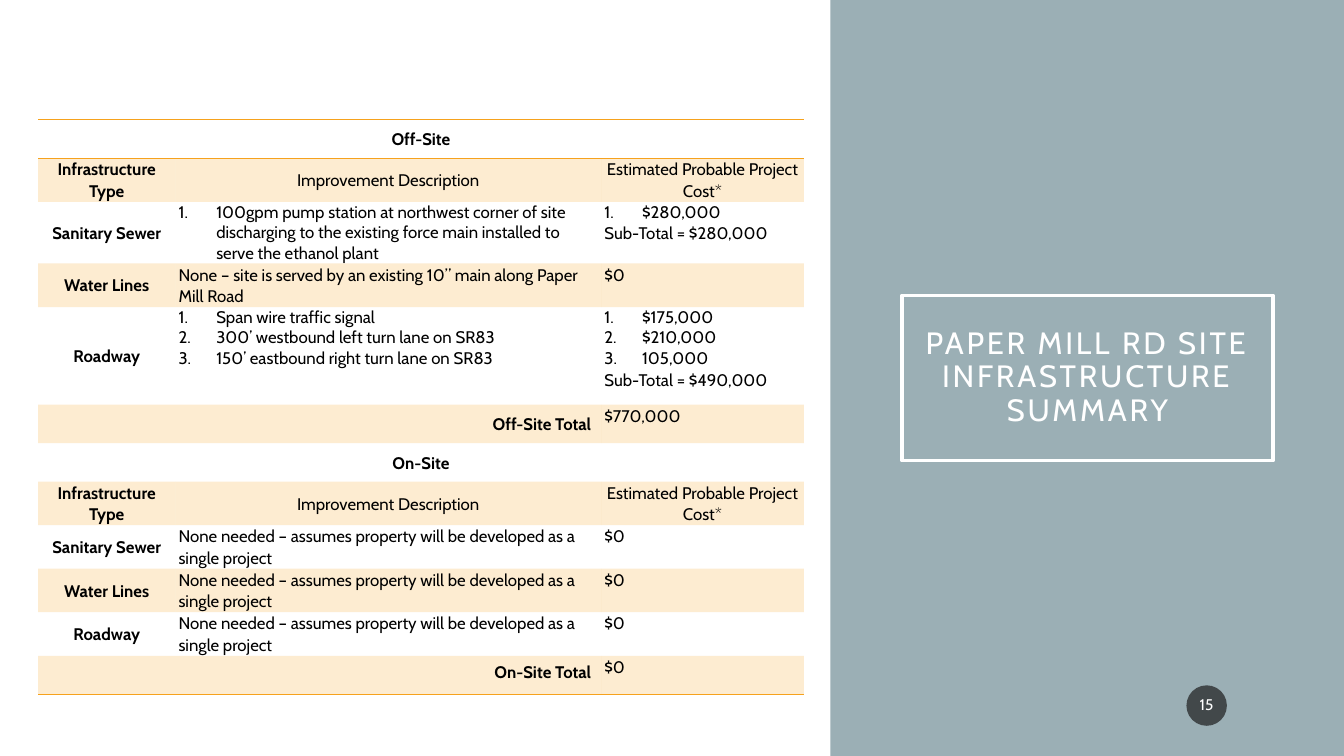
import pptx
import pptx.util
import pptx.dml.color
import pptx.enum.shapes
import pptx.enum.text
import pptx.oxml
import pptx.oxml.ns
import lxml.etree

Cm, Pt = pptx.util.Cm, pptx.util.Pt
RGB = pptx.dml.color.RGBColor
Shape = pptx.enum.shapes.MSO_SHAPE
Align = pptx.enum.text.PP_ALIGN
Anchor = pptx.enum.text.MSO_ANCHOR
qn = pptx.oxml.ns.qn

# Content: a cell is plain text, or (numbered items, closing line)
TITLE = "PAPER MILL RD SITE INFRASTRUCTURE SUMMARY"
PAGE = "15"
HEAD = ("Infrastructure Type", "Improvement Description",
        "Estimated Probable Project Cost*")
NONE = "None needed – assumes property will be developed as a single project"
ROWS = [
    ("Off-Site",),
    HEAD,
    ("Sanitary Sewer",
     (["100gpm pump station at northwest corner of site discharging to the "
       "existing force main installed to serve the ethanol plant"], ""),
     (["$280,000"], "Sub-Total = $280,000")),
    ("Water Lines",
     "None – site is served by an existing 10” main along Paper Mill Road",
     "$0"),
    ("Roadway",
     (["Span wire traffic signal", "300’ westbound left turn lane on SR83",
       "150’ eastbound right turn lane on SR83"], ""),
     (["$175,000", "$210,000", "105,000"], "Sub-Total = $490,000")),
    ("Off-Site Total", "$770,000"),
    ("On-Site",),
    HEAD,
    ("Sanitary Sewer", NONE, "$0"),
    ("Water Lines", NONE, "$0"),
    ("Roadway", NONE, "$0"),
    ("On-Site Total", "$0"),
]
WIDTHS = [3.46, 10.73, 5.11]
HEIGHTS = [0.97, 0.71, 1.3, 0.71, 2.46, 0.97, 0.97, 0.71, 0.71, 0.71, 0.71, 0.97]

FONT = "Cabin"
PLAIN_GRID = "{2D5ABB26-0587-4C30-8999-92F81FD0307C}"
SLATE = RGB(0x9B, 0xAF, 0xB5)
AMBER = RGB(0xF6, 0xA2, 0x1D)
DARK = RGB(0x1D, 0x1D, 0x1D)
BLACK = RGB(0, 0, 0)
WHITE = RGB(255, 255, 255)


def style(par, size, color, align, bold=None, space=None, after=None):
    par.alignment = align
    par.line_spacing = space
    par.space_after = after
    font = par.font
    font.name, font.size, font.bold = FONT, Pt(size), bold
    font.color.rgb = color


def pad(box, side, edge):
    box.margin_left = box.margin_right = Cm(side)
    box.margin_top = box.margin_bottom = Cm(edge)


def tint(fill, holder, color, share):
    fill.solid()
    fill.fore_color.rgb = color
    clr = holder.find(qn("a:solidFill")).find(qn("a:srgbClr"))
    lxml.etree.SubElement(clr, qn("a:alpha")).set("val", str(share * 1000))


def number(par):
    props = par._p.get_or_add_pPr()
    props.set("marL", str(Cm(0.95)))
    props.set("indent", str(-Cm(0.95)))
    mark = lxml.etree.SubElement(props, qn("a:buAutoNum"))
    mark.set("type", "arabicPeriod")


def border(cell, *sides):
    props = cell._tc.get_or_add_tcPr()
    for at, side in enumerate(sides):
        props.insert(at, pptx.oxml.parse_xml(
            f'<a:{side} {pptx.oxml.ns.nsdecls("a")} w="{Pt(1)}"><a:solidFill>'
            f'<a:srgbClr val="{AMBER}"/></a:solidFill></a:{side}>'))


def write(cell, value, align, bold):
    items, close = ([], value) if isinstance(value, str) else value
    lines = items + ([close] if close else [])
    for i, line in enumerate(lines):
        par = cell.text_frame.paragraphs[0] if i == 0 else cell.text_frame.add_paragraph()
        par.text = line
        listed = i < len(items)
        if listed:
            number(par)
        style(par, 12, BLACK, align, bold,
              None if listed else 1.06, Pt(0 if listed else 8))


deck = pptx.Presentation()
deck.slide_width, deck.slide_height = Cm(33.87), Cm(19.05)
slide = deck.slides.add_slide(deck.slide_layouts[5])
shapes = slide.shapes

# Side panel, placed behind the title
panel = shapes.add_shape(Shape.RECTANGLE, Cm(20.93), 0, Cm(12.94), Cm(19.05))
panel.shadow.inherit = False
panel.fill.solid()
panel.fill.fore_color.rgb = SLATE
panel.line.fill.background()
shapes._spTree.insert(2, panel._element)

# Framed title
title = shapes.title
title.left, title.top, title.width, title.height = Cm(22.73), Cm(7.44), Cm(9.35), Cm(4.17)
title.line.color.rgb, title.line.width = WHITE, Pt(2.5)
frame = title.text_frame
frame.text = TITLE
frame.word_wrap = True
frame.auto_size = pptx.enum.text.MSO_AUTO_SIZE.NONE
frame.vertical_anchor = Anchor.MIDDLE
pad(frame, 0.51, 0.51)
par = frame.paragraphs[0]
style(par, 22, WHITE, Align.CENTER, space=0.9)
par.font._rPr.set("spc", "200")

# Page number
badge = shapes.add_shape(Shape.OVAL, Cm(29.9), Cm(17.27), Cm(1.02), Cm(1.02))
badge.shadow.inherit = False
tint(badge.fill, badge._element.spPr, DARK, 70)
badge.line.fill.background()
frame = badge.text_frame
frame.text = PAGE
frame.vertical_anchor = Anchor.MIDDLE
pad(frame, 0.05, 0.13)
style(frame.paragraphs[0], 11, WHITE, Align.CENTER, space=0.9, after=Pt(6))

# Cost table
grid = shapes.add_table(len(ROWS), len(WIDTHS), Cm(0.96), Cm(3.02),
                        Cm(sum(WIDTHS)), Cm(sum(HEIGHTS))).table
grid.first_row = grid.horz_banding = False
grid._tbl.tblPr.find(qn("a:tableStyleId")).text = PLAIN_GRID
for col, width in zip(grid.columns, WIDTHS):
    col.width = Cm(width)

last = len(ROWS) - 1
for r, row in enumerate(ROWS):
    grid.rows[r].height = Cm(HEIGHTS[r])
    span = len(WIDTHS) - len(row)
    for c in range(len(WIDTHS)):
        cell = grid.cell(r, c)
        pad(cell, 0.08, 0)
        if r % 2:
            tint(cell.fill, cell._tc.get_or_add_tcPr(), AMBER, 20)
        else:
            cell.fill.background()
        if r == 0:
            border(cell, "lnT", "lnB")
        elif r == last:
            border(cell, "lnB")
    if span:
        grid.cell(r, 0).merge(grid.cell(r, span))
        pad(grid.cell(r, 0), 0.25, 0.13)
    for c, value in enumerate(row):
        cell = grid.cell(r, c + span if c else 0)
        first = c == 0
        middle = first or row is HEAD
        if middle and (r, c) != (last, 0):
            cell.vertical_anchor = Anchor.MIDDLE
        align = Align.CENTER if middle else Align.LEFT
        if first and span == 1:
            align = Align.RIGHT
        write(cell, value, align, first)

deck.save("out.pptx")
